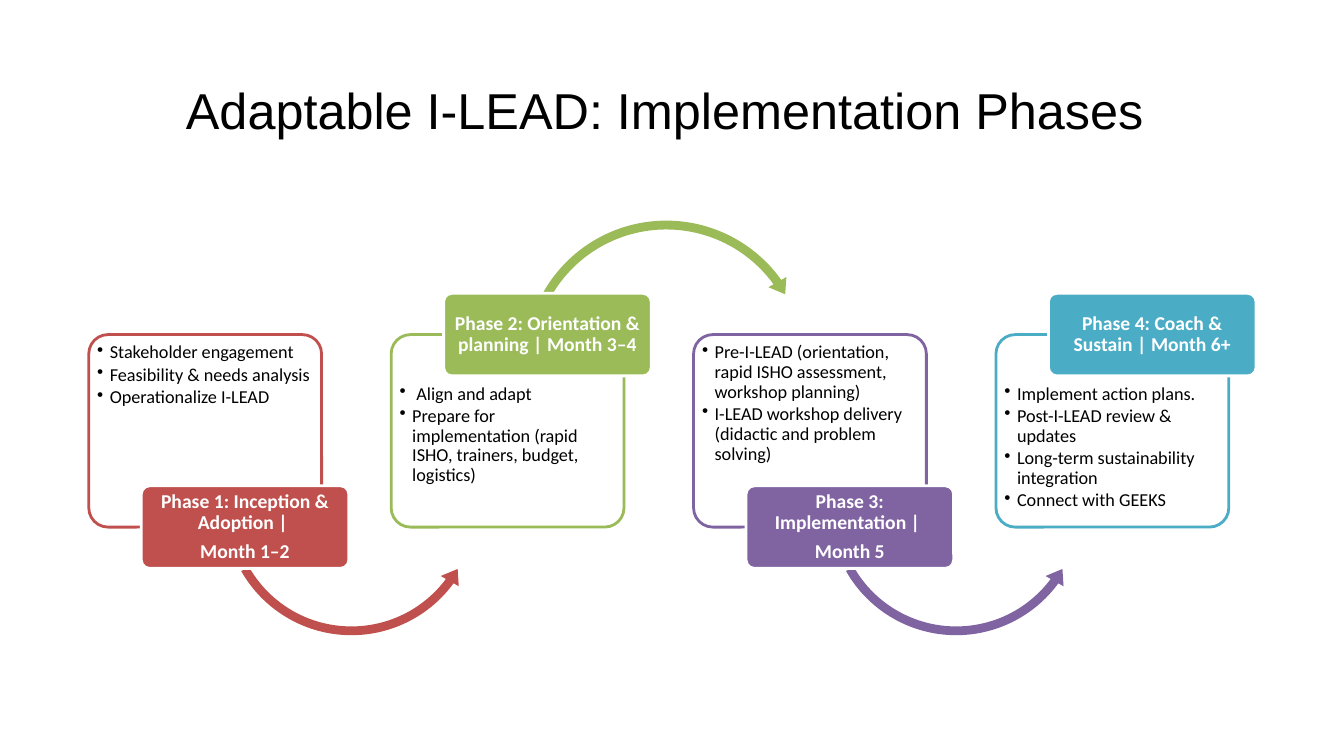
import pptx
import pptx.util
import pptx.dml.color
import pptx.enum.shapes
import pptx.enum.text
import pptx.oxml
import pptx.oxml.ns

Pt = pptx.util.Pt
SHAPE = pptx.enum.shapes.MSO_SHAPE
ANCHOR = pptx.enum.text.MSO_ANCHOR
ALIGN = pptx.enum.text.PP_ALIGN

PHASES = [
    ("C0504D", ["Phase 1: Inception & Adoption | ", "Month 1–2"],
     ["Stakeholder engagement", "Feasibility & needs analysis", "Operationalize I-LEAD"]),
    ("9BBB59", ["Phase 2: Orientation & planning | Month 3–4"],
     [" Align and adapt",
      "Prepare for implementation (rapid ISHO, trainers, budget, logistics)"]),
    ("8064A2", ["Phase 3: Implementation | ", "Month 5"],
     ["Pre-I-LEAD (orientation, rapid ISHO assessment, workshop planning)",
      "I-LEAD workshop delivery (didactic and problem solving)"]),
    ("4BACC6", ["Phase 4: Coach & Sustain | Month 6+"],
     ["Implement action plans.", "Post-I-LEAD review & updates",
      "Long-term sustainability integration", "Connect with GEEKS"]),
]
CARD_LEFT, CARD_TOP, CARD_WIDTH, CARD_HEIGHT, CARD_STEP = 63.4, 239, 166.3, 137.5, 216
BADGE_WIDTH, BADGE_HEIGHT = 148.3, 59


def rgb(value):
    """Return the colour for a hex string."""
    return pptx.dml.color.RGBColor.from_string(value)


def add_solid(slide, kind, box, adjustments, fill, line=None):
    """Add a filled preset shape with an optional 2 pt outline."""
    solid = slide.shapes.add_shape(kind, *map(Pt, box))
    solid.shadow.inherit = False
    for index, value in enumerate(adjustments):
        solid.adjustments[index] = value
    solid.fill.solid()
    solid.fill.fore_color.rgb = rgb(fill)
    if line:
        solid.line.color.rgb = rgb(line)
        solid.line.width = Pt(2)
    else:
        solid.line.fill.background()
    return solid


def write_text(holder, lines, size, color, align, anchor, font, insets, gap=0, bold=False):
    """Fill a shape with paragraphs that share one format."""
    frame = holder.text_frame
    frame.text = "\n".join(lines)
    frame.word_wrap = True
    frame.vertical_anchor = anchor
    (frame.margin_left, frame.margin_top,
     frame.margin_right, frame.margin_bottom) = map(Pt, insets)
    for paragraph in frame.paragraphs:
        paragraph.alignment = align
        paragraph.line_spacing = 0.9
        paragraph.space_after = Pt(gap)
        for run in paragraph.runs:
            run.font.name = font
            run.font.size = Pt(size)
            run.font.bold = bold
            run.font.color.rgb = rgb(color)


def add_bullets(frame):
    """Give every paragraph a hanging bullet."""
    for paragraph in frame.paragraphs:
        properties = paragraph._p.get_or_add_pPr()
        properties.set("marL", str(Pt(9)))
        properties.set("indent", str(Pt(-9)))
        properties.append(pptx.oxml.parse_xml(
            '<a:buChar %s char="•"/>' % pptx.oxml.ns.nsdecls("a")))


def add_title(slide, box, wording):
    """Place the title placeholder in its box."""
    title = slide.shapes.title
    title.left, title.top, title.width, title.height = map(Pt, box)
    write_text(title, [wording], 36, "000000", ALIGN.CENTER, ANCHOR.MIDDLE,
               "Arial", (7.2, 3.6, 7.2, 3.6))


def add_card(slide, box, color, tasks, badge_on_top):
    """Draw the outlined card with its task list."""
    card = add_solid(slide, SHAPE.ROUNDED_RECTANGLE, box, [0.1], "FFFFFF", color)
    top_inset = 31.5 if badge_on_top else 2
    write_text(card, tasks, 13, "000000", ALIGN.LEFT, ANCHOR.TOP,
               "Calibri", (2, top_inset, 2, 2), gap=2)
    add_bullets(card.text_frame)


def add_badge(slide, box, color, heading):
    """Draw the coloured phase heading."""
    badge = add_solid(slide, SHAPE.ROUNDED_RECTANGLE, box, [0.1], color, "FFFFFF")
    write_text(badge, heading, 14, "FFFFFF", ALIGN.CENTER, ANCHOR.MIDDLE,
               "Calibri", (2, 1.5, 2, 1.5), gap=5, bold=True)


def add_arrow(slide, box, color, badge_on_top):
    """Draw the curved arrow that leads to the next phase."""
    left, top = box[:2]
    if badge_on_top:
        add_solid(slide, SHAPE.CIRCULAR_ARROW, (left + 91.4, top - 85.6, 210.2, 210.2),
                  [0.03, 3.637, 194.608, 125.755, 0.035], color)
    else:
        add_solid(slide, SHAPE.LEFT_CIRCULAR_ARROW, (left + 92.9, top + 29.6, 189.4, 189.4),
                  [0.033, 4.084, 21.839, 90.245, 0.039], color)


def add_phase(slide, box, phase, badge_on_top, leads_on):
    """Draw one phase: card, arrow and badge."""
    color, heading, tasks = phase
    left, top, width, height = box
    add_card(slide, box, color, tasks, badge_on_top)
    if leads_on:
        add_arrow(slide, box, color, badge_on_top)
    edge = top if badge_on_top else top + height
    add_badge(slide, (left + 37.5, edge - BADGE_HEIGHT / 2, BADGE_WIDTH, BADGE_HEIGHT),
              color, heading)


def main():
    """Build and save the slide."""
    presentation = pptx.Presentation()
    presentation.slide_width, presentation.slide_height = Pt(960), Pt(540)
    slide = presentation.slides.add_slide(presentation.slide_layouts[5])
    add_title(slide, (66, 28.8, 828, 104.4), "Adaptable I-LEAD: Implementation Phases ")
    for index, phase in enumerate(PHASES):
        box = (CARD_LEFT + index * CARD_STEP, CARD_TOP, CARD_WIDTH, CARD_HEIGHT)
        add_phase(slide, box, phase, badge_on_top=index % 2 == 1,
                  leads_on=index < len(PHASES) - 1)
    presentation.save("out.pptx")


if __name__ == "__main__":
    main()
